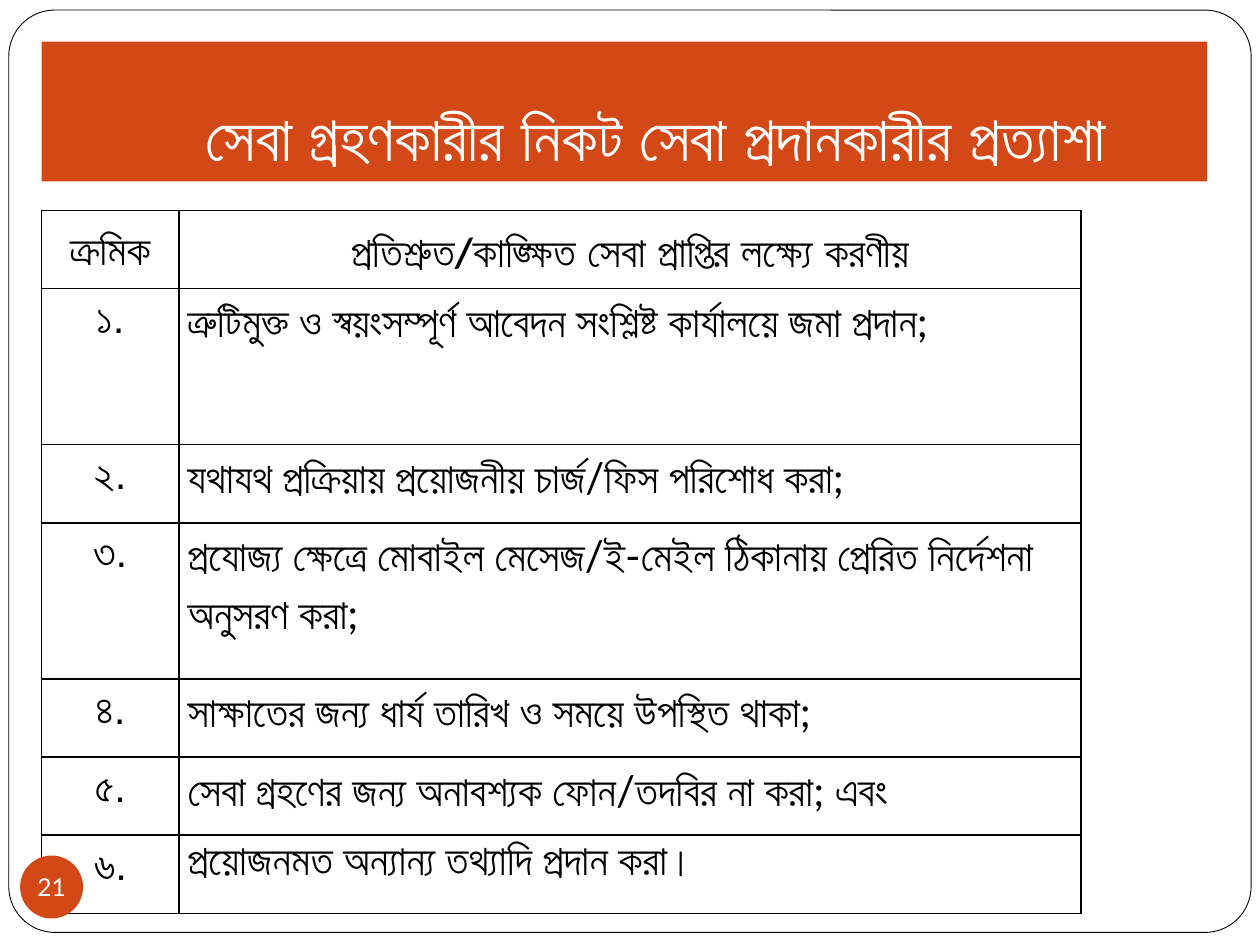
"""Build the slide on what service providers expect from service recipients."""
from dataclasses import dataclass
from typing import NamedTuple

from lxml.etree import SubElement
from pptx import Presentation
from pptx.dml.color import RGBColor
from pptx.enum.shapes import MSO_SHAPE as Preset
from pptx.enum.text import MSO_ANCHOR as Anchor, MSO_AUTO_SIZE as AutoSize, PP_ALIGN as Align
from pptx.oxml.ns import qn
from pptx.util import Inches, Pt


@dataclass(frozen=True)
class Theme:
    """Colours, fonts and type sizes of the slide."""
    accent: RGBColor = RGBColor(0xD3, 0x48, 0x17)
    paper: RGBColor = RGBColor(0xFF, 0xFF, 0xFF)
    ink: RGBColor = RGBColor(0, 0, 0)
    label_font: str = "Calibri"
    body_font: str = "Lato"
    plain_font: str = "Arial"
    title_size: int = 36
    table_size: int = 24
    number_size: int = 14


class Box(NamedTuple):
    """Place and size in inches."""
    left: float
    top: float
    width: float
    height: float

    def lengths(self) -> list:
        """Return the four measures as lengths."""
        return [Inches(measure) for measure in self]


class Expectation(NamedTuple):
    """One numbered table row."""
    numeral: str
    action: str
    lines: int = 1


THEME = Theme()
FRAME = Box(0.07, 0.08, 9.86, 7.32)
BANNER = Box(0.33, 0.33, 9.25, 1.11)
BADGE = Box(0.16, 6.79, 0.5, 0.5)
GRID = Box(0.33, 1.67, 8.25, 5.58)
COLUMN_WIDTHS = (1.09, 7.16)
LINE_HEIGHT = 0.62
TITLE = "সেবা গ্রহণকারীর নিকট সেবা প্রদানকারীর প্রত্যাশা"
HEADINGS = ("ক্রমিক", "প্রতিশ্রুত/কাঙ্ক্ষিত সেবা প্রাপ্তির লক্ষ্যে করণীয়")
EXPECTATIONS = (
    Expectation("১", "ত্রুটিমুক্ত ও স্বয়ংসম্পূর্ণ আবেদন সংশ্লিষ্ট কার্যালয়ে জমা প্রদান;", 2),
    Expectation("২", "যথাযথ প্রক্রিয়ায় প্রয়োজনীয় চার্জ/ফিস পরিশোধ করা;"),
    Expectation("৩", "প্রযোজ্য ক্ষেত্রে মোবাইল মেসেজ/ই-মেইল ঠিকানায় প্রেরিত নির্দেশনা অনুসরণ করা;", 2),
    Expectation("৪", "সাক্ষাতের জন্য ধার্য তারিখ ও সময়ে উপস্থিত থাকা;"),
    Expectation("৫", "সেবা গ্রহণের জন্য অনাবশ্যক ফোন/তদবির না করা; এবং"),
    Expectation("৬", "প্রয়োজনমত অন্যান্য তথ্যাদি প্রদান করা।"),
)


def write(paragraph, text: str, *, font: str, size: int = THEME.table_size,
          color: RGBColor = THEME.ink, bold: bool = False,
          align: Align = Align.LEFT, spacing: float = 1.0) -> None:
    """Append a formatted run to a paragraph."""
    paragraph.alignment = align
    paragraph.line_spacing = spacing
    run = paragraph.add_run()
    run.text = text
    run.font.name = font
    run.font.size = Pt(size)
    run.font.bold = bold
    run.font.color.rgb = color


def set_insets(holder, left: float, top: float, right: float, bottom: float) -> None:
    """Set the inner margins of a cell or text frame in inches."""
    holder.margin_left, holder.margin_top = Inches(left), Inches(top)
    holder.margin_right, holder.margin_bottom = Inches(right), Inches(bottom)


def add_panel(slide, preset: Preset, box: Box, fill: RGBColor):
    """Add a flat filled shape without an outline."""
    panel = slide.shapes.add_shape(preset, *box.lengths())
    panel.shadow.inherit = False
    panel.fill.solid()
    panel.fill.fore_color.rgb = fill
    panel.line.fill.background()
    return panel


def add_frame(slide) -> None:
    """Add the rounded border around the slide."""
    frame = add_panel(slide, Preset.ROUNDED_RECTANGLE, FRAME, THEME.paper)
    frame.adjustments[0] = 0.05
    frame.line.color.rgb = THEME.ink
    frame.line.width = Pt(0.5)


def format_cell(cell, anchor: Anchor = Anchor.TOP):
    """Clear the fill, draw the borders and return the paragraph."""
    properties = cell._tc.get_or_add_tcPr()
    for side in ("a:lnL", "a:lnR", "a:lnT", "a:lnB"):
        border = SubElement(properties, qn(side), w=str(Pt(1)))
        paint = SubElement(border, qn("a:solidFill"))
        SubElement(paint, qn("a:srgbClr"), val=str(THEME.ink))
    cell.fill.background()
    cell.vertical_anchor = anchor
    set_insets(cell, 0.07, 0, 0.07, 0)
    return cell.text_frame.paragraphs[0]


def add_expectations(slide):
    """Add the table of expected actions."""
    holder = slide.shapes.add_table(len(EXPECTATIONS) + 1, len(COLUMN_WIDTHS), *GRID.lengths())
    grid = holder.table
    grid.first_row = grid.horz_banding = False
    for column, width in zip(grid.columns, COLUMN_WIDTHS):
        column.width = Inches(width)
    grid.rows[0].height = Inches(LINE_HEIGHT)
    for index, heading in enumerate(HEADINGS):
        write(format_cell(grid.cell(0, index), Anchor.MIDDLE), heading,
              font=THEME.label_font, bold=index == 1, align=Align.CENTER, spacing=1.15)
    for index, expectation in enumerate(EXPECTATIONS, start=1):
        grid.rows[index].height = Inches(LINE_HEIGHT * expectation.lines)
        serial = format_cell(grid.cell(index, 0))
        for part, font in ((expectation.numeral, THEME.label_font), (".", THEME.plain_font)):
            write(serial, part, font=font, align=Align.CENTER, spacing=1.15)
        write(format_cell(grid.cell(index, 1)), expectation.action,
              font=THEME.body_font, spacing=1.15)
    return holder


def place_title(slide, below) -> None:
    """Fill the title banner and lift it above the given element."""
    banner = slide.shapes.title
    banner.left, banner.top, banner.width, banner.height = BANNER.lengths()
    banner.fill.solid()
    banner.fill.fore_color.rgb = THEME.accent
    frame = banner.text_frame
    frame.word_wrap = True
    frame.auto_size = AutoSize.NONE
    frame.vertical_anchor = Anchor.MIDDLE
    set_insets(frame, 0.6, 0.45, 0.1, 0.05)
    write(frame.paragraphs[0], TITLE, font=THEME.plain_font, size=THEME.title_size,
          color=THEME.paper, bold=True, align=Align.CENTER)
    below.element.addnext(banner.element)


def add_page_badge(slide, number: str) -> None:
    """Add the round slide number."""
    badge = add_panel(slide, Preset.OVAL, BADGE, THEME.accent)
    frame = badge.text_frame
    frame.word_wrap = False
    frame.vertical_anchor = Anchor.MIDDLE
    set_insets(frame, 0, 0, 0, 0)
    write(frame.paragraphs[0], number, font=THEME.body_font, size=THEME.number_size,
          color=THEME.paper, align=Align.CENTER)


def main() -> None:
    """Build and save the presentation."""
    deck = Presentation()
    deck.slide_width, deck.slide_height = Inches(10), Inches(7.5)
    slide = deck.slides.add_slide(deck.slide_layouts[5])
    add_frame(slide)
    expectations = add_expectations(slide)
    place_title(slide, below=expectations)
    add_page_badge(slide, "21")
    deck.save("out.pptx")


if __name__ == "__main__":
    main()
